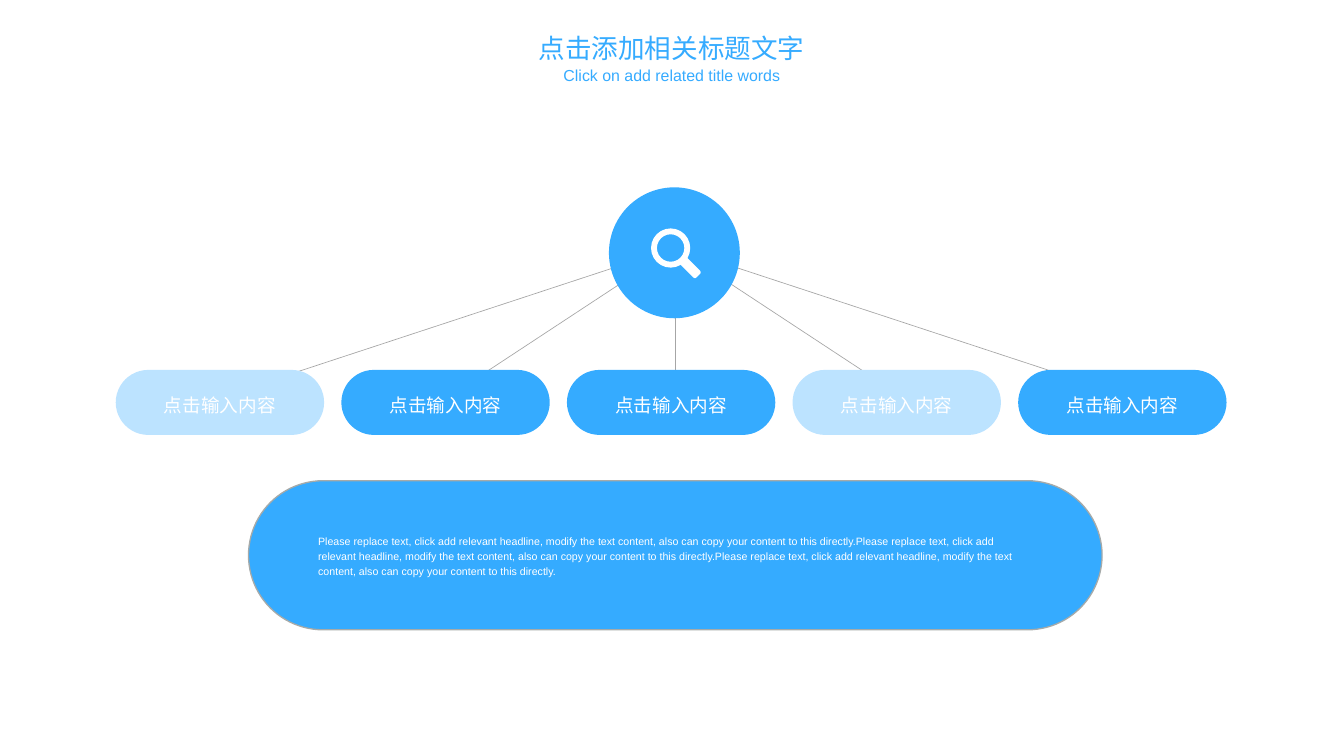
from dataclasses import dataclass

from lxml import etree
from pptx import Presentation
from pptx.dml.color import RGBColor
from pptx.enum.shapes import MSO_CONNECTOR, MSO_SHAPE as Preset
from pptx.enum.text import MSO_ANCHOR as Anchor, PP_ALIGN as Align
from pptx.oxml.ns import qn
from pptx.util import Inches, Pt

BLUE, PALE, WHITE = "35ABFF", "BCE3FF", "FFFFFF"
SPOKE_GREY, BORDER_GREY = "A6A6A6", "A6AAA9"
PILL_COLOURS = [PALE, BLUE, BLUE, PALE, BLUE]
PILL_TEXT = "点击输入内容"
SENTENCE = ("Please replace text, click add relevant headline, modify the text content, "
            "also can copy your content to this directly.")


@dataclass
class Box:
    left: int
    top: int
    width: int
    height: int

    def point(self, x, y):
        """Position at x and y percent of this box."""
        return int(self.left + self.width * x / 100), int(self.top + self.height * y / 100)

    def inner(self, x, y, width, height):
        """Inner box, given in percent of this box."""
        return Box(*self.point(x, y), int(self.width * width / 100),
                   int(self.height * height / 100))

    def bounds(self):
        return self.left, self.top, self.width, self.height


def colour(hex_string):
    return RGBColor.from_string(hex_string)


def set_values(target, values):
    for name, value in values.items():
        setattr(target, name, value)


def write(shape, text, font, frame, paragraph_format):
    """Fill a shape or text box with one formatted paragraph."""
    set_values(shape.text_frame, {"word_wrap": True, **frame})
    paragraph = shape.text_frame.paragraphs[0]
    set_values(paragraph, paragraph_format)
    run = paragraph.add_run()
    run.text = text
    size, name, hex_string = font
    set_values(run.font, {"size": Pt(size), "name": name})
    run.font.color.rgb = colour(hex_string)


def add_preset(slide, preset, box, fill, adjustment=None):
    shape = slide.shapes.add_shape(preset, *box.bounds())
    shape.shadow.inherit = False
    shape.fill.solid()
    shape.fill.fore_color.rgb = colour(fill)
    shape.line.fill.background()
    if adjustment is not None:
        shape.adjustments[0] = adjustment
    return shape


def add_header(slide, box):
    lines = [
        ("点击添加相关标题文字", (20, "Noto Sans CJK SC", BLUE), (0, 0, 100, 53.95)),
        ("Click on add related title words", (12, "Arial", BLUE), (12.24, 46.05, 75.82, 53.95)),
    ]
    frame = {"margin_left": Inches(0.11), "margin_right": Inches(0.11),
             "margin_top": Inches(0.05), "margin_bottom": Inches(0.05)}
    for text, font, place in lines:
        text_box = slide.shapes.add_textbox(*box.inner(*place).bounds())
        write(text_box, text, font, frame, {"alignment": Align.CENTER, "space_after": Pt(6)})


def add_spokes(slide, box):
    """Lines from the top middle of the box to even steps along its bottom."""
    step = 100 / (len(PILL_COLOURS) - 1)
    for index in range(len(PILL_COLOURS)):
        spoke = slide.shapes.add_connector(
            MSO_CONNECTOR.STRAIGHT, *box.point(50, 0), *box.point(index * step, 100))
        spoke.line.color.rgb = colour(SPOKE_GREY)
        spoke.line.width = Pt(0.5)
        etree.SubElement(spoke._element.spPr, qn("a:effectLst"))


def add_pills(slide, box):
    width = 18.76
    pitch = (100 - width) / (len(PILL_COLOURS) - 1)
    frame = {"vertical_anchor": Anchor.MIDDLE, "margin_left": 0, "margin_right": 0,
             "margin_top": 0, "margin_bottom": 0}
    for index, fill in enumerate(PILL_COLOURS):
        place = box.inner(index * pitch, 0, width, 100)
        pill = add_preset(slide, Preset.ROUNDED_RECTANGLE, place, fill, 0.5)
        write(pill, PILL_TEXT, (14, "Arial", WHITE), frame,
              {"alignment": Align.CENTER, "line_spacing": 1.2})


def add_search_hub(slide, box):
    add_preset(slide, Preset.OVAL, box, BLUE)
    add_preset(slide, Preset.DONUT, box.inner(32.12, 31.39, 29.93, 29.93), WHITE, 0.15)
    handle = add_preset(slide, Preset.ROUNDED_RECTANGLE,
                        box.inner(53.28, 57.66, 17.52, 7.3), WHITE, 0.25)
    handle.rotation = 45


def add_message(slide, box):
    panel = add_preset(slide, Preset.ROUNDED_RECTANGLE, box, BLUE, 0.5)
    panel.line.color.rgb = colour(BORDER_GREY)
    panel.line.width = Pt(1)
    frame = {"vertical_anchor": Anchor.MIDDLE, "margin_top": 0, "margin_bottom": 0,
             "margin_left": int(box.width * 0.056), "margin_right": int(box.width * 0.066)}
    write(panel, SENTENCE * 3, (8, "Arial", WHITE), frame,
          {"alignment": Align.LEFT, "line_spacing": 1.2})


def main():
    presentation = Presentation()
    set_values(presentation, {"slide_width": Inches(14.06), "slide_height": Inches(7.91)})
    slide = presentation.slides.add_slide(presentation.slide_layouts[6])
    page = Box(0, 0, presentation.slide_width, presentation.slide_height)
    add_spokes(slide, page.inner(16.29, 32.74, 67.92, 19.85))
    add_pills(slide, page.inner(8.61, 48.93, 82.65, 8.6))
    add_message(slide, page.inner(18.49, 63.59, 63.51, 19.72))
    add_search_hub(slide, page.inner(45.31, 24.78, 9.74, 17.32))
    add_header(slide, page.inner(38.05, 3.67, 23.83, 9.61))
    presentation.save("out.pptx")


if __name__ == "__main__":
    main()
